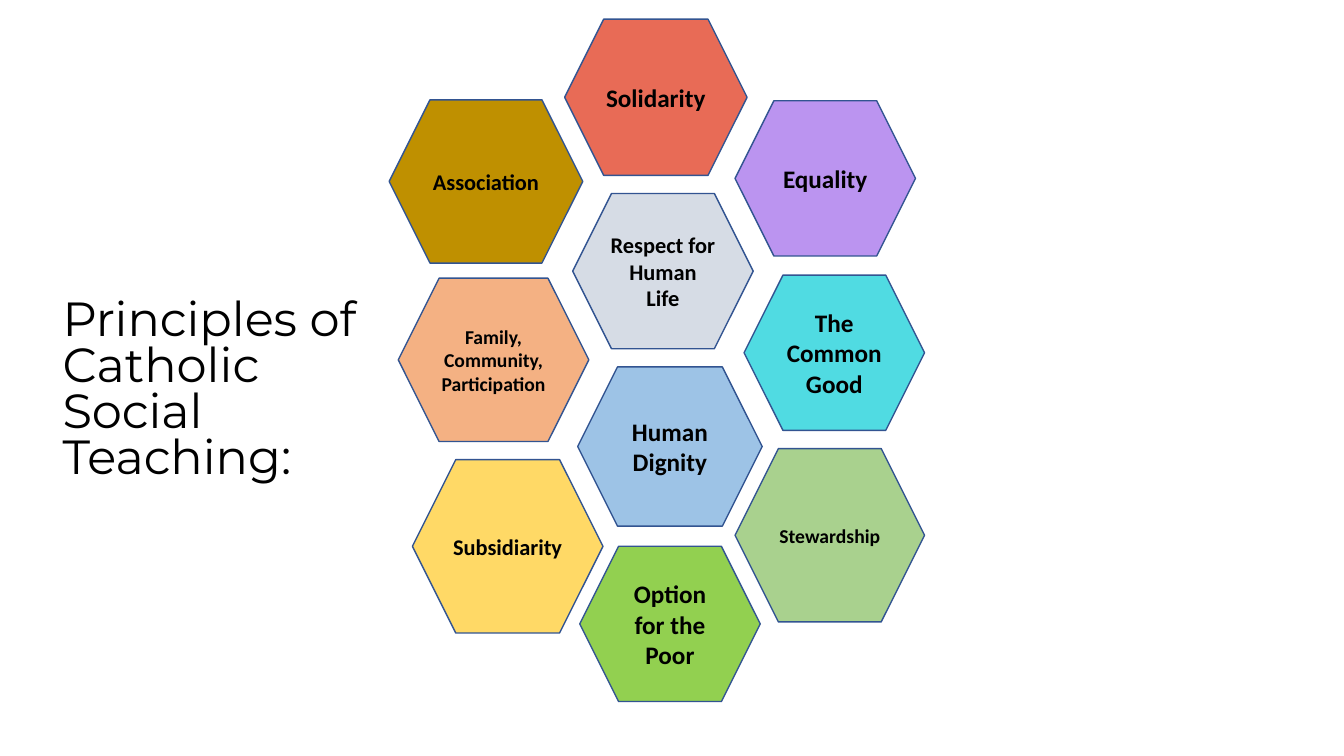
"""Build a slide of ten hexagons naming the principles of Catholic social teaching."""
from pptx import Presentation
from pptx.dml.color import RGBColor
from pptx.enum.shapes import MSO_SHAPE
from pptx.enum.text import MSO_ANCHOR, PP_ALIGN
from pptx.util import Emu, Pt

HEXAGON = MSO_SHAPE.HEXAGON
TOP, MIDDLE = MSO_ANCHOR.TOP, MSO_ANCHOR.MIDDLE
LEFT, CENTER = PP_ALIGN.LEFT, PP_ALIGN.CENTER
TITLE_ONLY = 5
EMU_PER_PX = 9144
PAGE_SIZE = (1333, 750)

COLORS = {
    "text": "000000", "outline": "325491", "turquoise": "50DBE2",
    "sage": "A9D18E", "green": "92D050", "yellow": "FFD966",
    "peach": "F4B183", "ochre": "BF9000", "coral": "E86B56",
    "blue": "9DC3E6", "violet": "BB94F0", "gray": "D6DCE5",
}

TITLE = "Principles of Catholic Social Teaching:"
TITLE_BOX = (52, 292, 344, 239)

PRINCIPLES = [
    ("The Common Good", "turquoise", 18, (738, 273, 179, 154)),
    ("Stewardship", "sage", 14, (729, 445, 188, 172)),
    ("Option for the Poor", "green", 18, (575, 542, 179, 154)),
    ("Subsidiarity", "yellow", 16, (409, 456, 189, 172)),
    ("Family,\nCommunity,\nParticipation", "peach", 14, (395, 276, 189, 162)),
    ("Association", "ochre", 16, (386, 99, 192, 162)),
    ("Solidarity", "coral", 18, (560, 19, 181, 155)),
    ("Human Dignity", "blue", 18, (573, 364, 183, 158)),
    ("Equality", "violet", 18, (729, 100, 179, 154)),
    ("Respect for Human Life", "gray", 16, (568, 192, 179, 154)),
]


def px(length):
    return Emu(length * EMU_PER_PX)


def color(name):
    return RGBColor.from_string(COLORS[name])


def write(shape, text, *, size, font="Calibri", bold=False, align=CENTER,
          anchor=MIDDLE, spacing=None):
    frame = shape.text_frame
    frame.word_wrap = True
    frame.vertical_anchor = anchor
    frame.text = text
    for para in frame.paragraphs:
        para.alignment = align
        para.line_spacing = spacing
        for span in para.runs:
            span.font.name = font
            span.font.size = Pt(size)
            span.font.bold = bold
            span.font.color.rgb = color("text")


def add_hexagon(page, text, fill, size, box):
    hexagon = page.shapes.add_shape(HEXAGON, *map(px, box))
    hexagon.shadow.inherit = False
    hexagon.fill.solid()
    hexagon.fill.fore_color.rgb = color(fill)
    hexagon.line.color.rgb = color("outline")
    hexagon.line.width = Pt(1)
    write(hexagon, text, size=size, bold=True)


def add_title(page):
    title = page.shapes.title
    title.left, title.top, title.width, title.height = map(px, TITLE_BOX)
    write(title, TITLE, size=34.2, font="Montserrat", align=LEFT,
          anchor=TOP, spacing=0.8)


def main():
    deck = Presentation()
    deck.slide_width, deck.slide_height = map(px, PAGE_SIZE)
    page = deck.slides.add_slide(deck.slide_layouts[TITLE_ONLY])
    add_title(page)
    for principle in PRINCIPLES:
        add_hexagon(page, *principle)
    deck.save("out.pptx")


if __name__ == "__main__":
    main()
